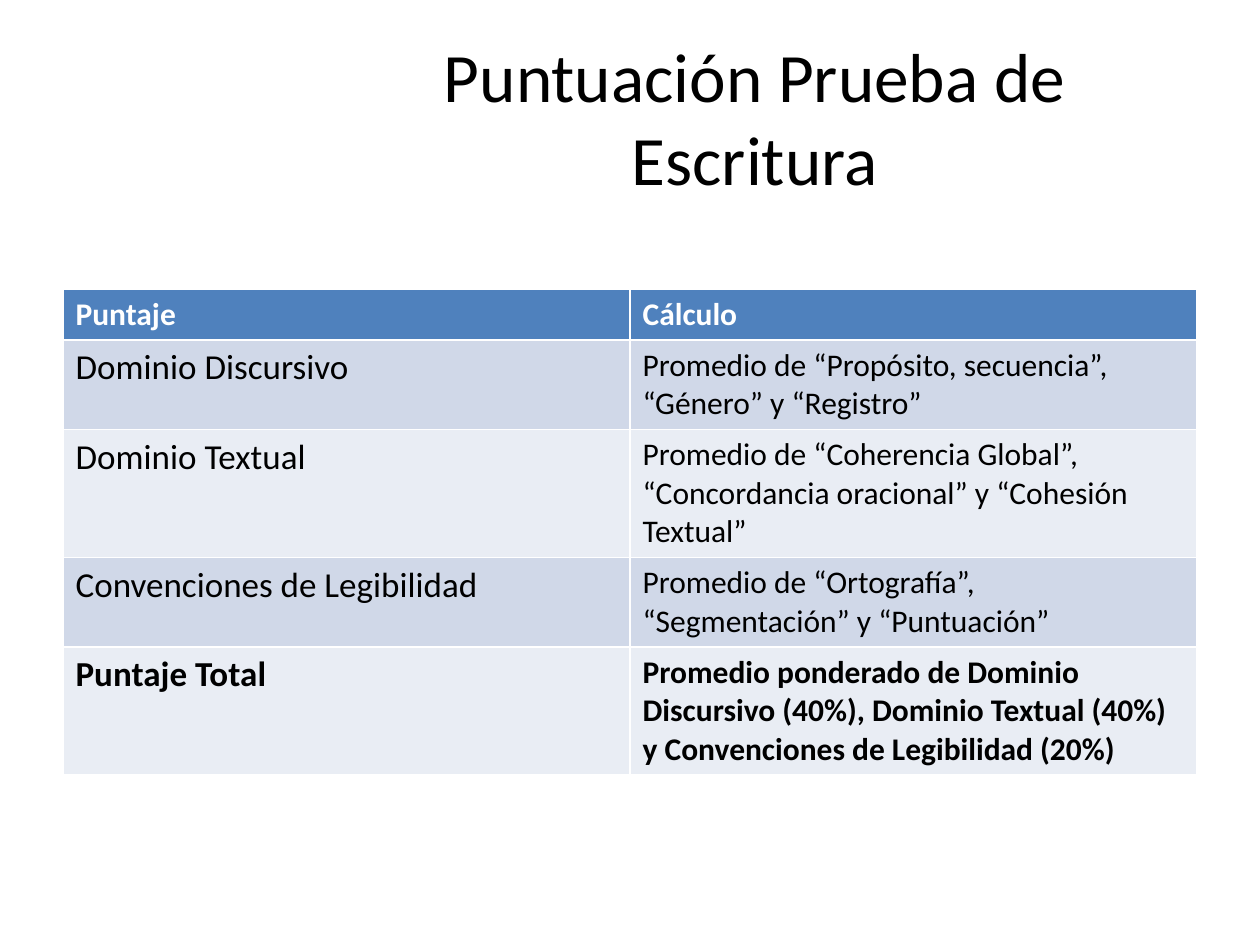
from pptx import Presentation
from pptx.dml.color import RGBColor
from pptx.enum.text import MSO_ANCHOR, MSO_AUTO_SIZE, PP_ALIGN
from pptx.util import Pt

FONT = "Calibri"
BLACK = RGBColor(0x00, 0x00, 0x00)
WHITE = RGBColor(0xFF, 0xFF, 0xFF)
HEADER_BLUE = RGBColor(0x4F, 0x81, 0xBD)
BAND_FILLS = [RGBColor(0xE9, 0xED, 0xF4), RGBColor(0xD0, 0xD8, 0xE8)]

SCORES = [
    ("Puntaje", "Cálculo"),
    ("Dominio Discursivo",
     "Promedio de “Propósito, secuencia”, “Género” y “Registro”"),
    ("Dominio Textual",
     "Promedio de “Coherencia Global”, “Concordancia oracional” y “Cohesión Textual”"),
    ("Convenciones de Legibilidad",
     "Promedio de “Ortografía”, “Segmentación” y “Puntuación”"),
    ("Puntaje Total",
     "Promedio ponderado de Dominio Discursivo (40%), Dominio Textual (40%) "
     "y Convenciones de Legibilidad (20%)"),
]


def add_span(para, text, size, color, bold=False):
    span = para.add_run()
    span.text = text
    span.font.name = FONT
    span.font.size = Pt(size)
    span.font.bold = bold
    span.font.color.rgb = color


deck = Presentation()
deck.slide_width, deck.slide_height = Pt(720), Pt(540)
page = deck.slides.add_slide(deck.slide_layouts[5])

# Title
title = page.shapes.title
title.left, title.top, title.width, title.height = Pt(178.5), Pt(21.6), Pt(505.5), Pt(90)
title.text_frame.word_wrap = True
title.text_frame.auto_size = MSO_AUTO_SIZE.NONE
title.text_frame.vertical_anchor = MSO_ANCHOR.MIDDLE
para = title.text_frame.paragraphs[0]
para.alignment = PP_ALIGN.CENTER
add_span(para, "Puntuación Prueba de Escritura", 39.6, BLACK)

# Score table: the default style draws the white borders, rows grow with their text
row_height = 29.2
table = page.shapes.add_table(len(SCORES), 2, Pt(36), Pt(165), Pt(648),
                              Pt(row_height * len(SCORES))).table
for row, texts in enumerate(SCORES):
    table.rows[row].height = Pt(row_height)
    is_header = row == 0
    is_total = row == len(SCORES) - 1
    for column, text in enumerate(texts):
        cell = table.cell(row, column)
        cell.fill.solid()
        cell.fill.fore_color.rgb = HEADER_BLUE if is_header else BAND_FILLS[row % 2]
        size = 20 if column == 0 and not is_header else 18
        add_span(cell.text_frame.paragraphs[0], text, size,
                 WHITE if is_header else BLACK, is_header or is_total)

deck.save("out.pptx")
